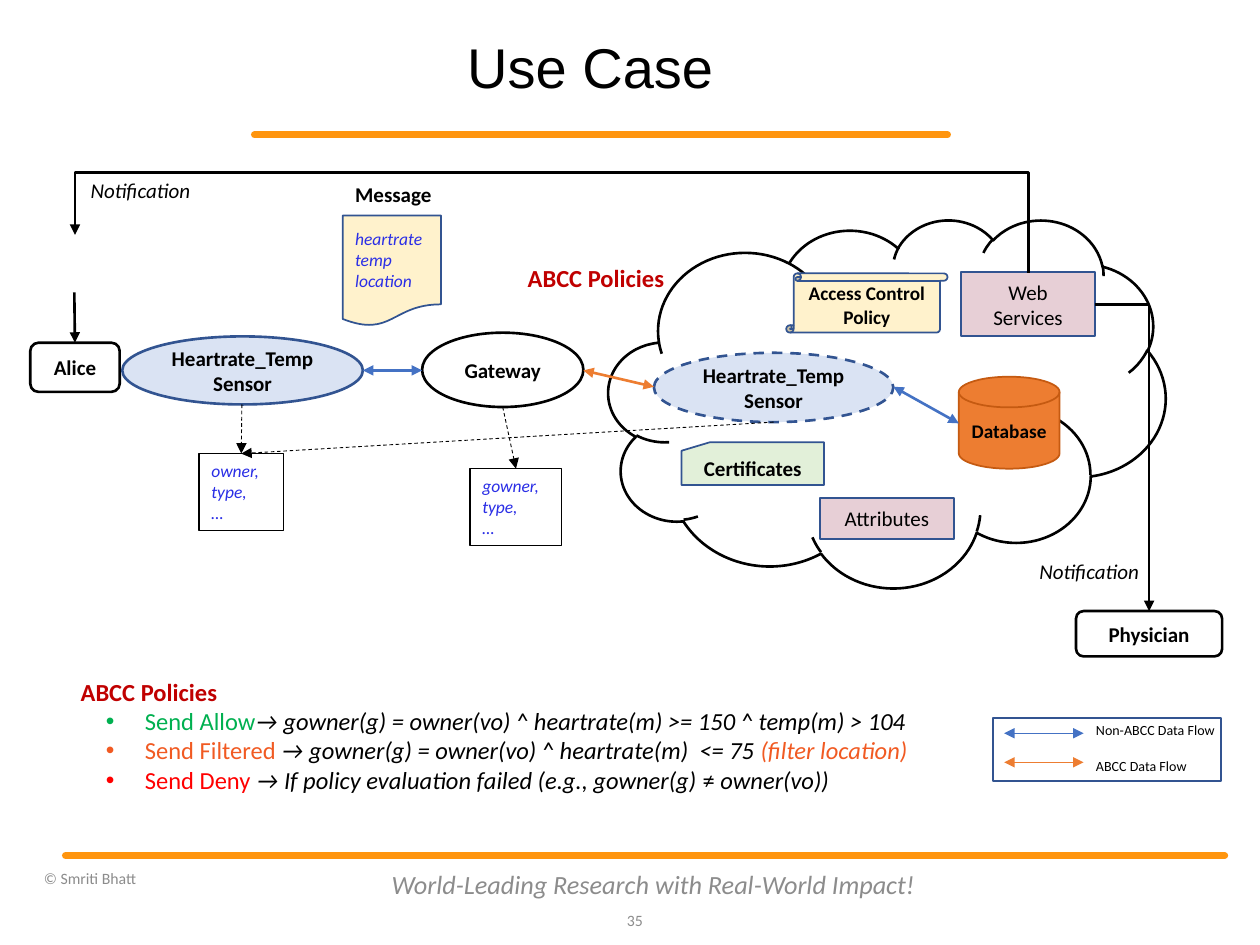
from lxml.etree import SubElement
from pptx import Presentation
from pptx.dml.color import RGBColor as RGB
from pptx.enum.dml import MSO_LINE
from pptx.enum.shapes import MSO_CONNECTOR as CON, MSO_SHAPE as SHAPE
from pptx.enum.text import MSO_ANCHOR as ANCHOR, MSO_AUTO_SIZE as FIT, PP_ALIGN as ALIGN
from pptx.oxml.ns import qn
from pptx.util import Inches, Pt

BLACK = RGB(0, 0, 0)
GRAY = RGB(0x8C, 0x8C, 0x8C)
GOLD = RGB(0xFF, 0x95, 0x0E)
NAVY = RGB(0x32, 0x54, 0x91)
BLUE = RGB(0x44, 0x72, 0xC4)
ORANGE = RGB(0xED, 0x7D, 0x31)
RUST = RGB(0xC5, 0x5A, 0x11)
SKY = RGB(0xDA, 0xE3, 0xF3)
CREAM = RGB(0xFF, 0xF2, 0xCC)
MINT = RGB(0xE2, 0xF0, 0xD9)
PINK = RGB(0xE7, 0xCF, 0xD6)
INK = RGB(0x2A, 0x2E, 0xE6)
RED = RGB(0xC0, 0, 0)
ALLOW = RGB(0, 0xB0, 0x50)
FILTER = RGB(0xF1, 0x5A, 0x22)
DENY = RGB(0xFF, 0, 0)

# key: kind, place, fill, line colour, line width, text, size, bold
NODES = {
    "sensor": (SHAPE.OVAL, (0.97, 2.67, 1.91, 0.54), SKY, NAVY, 1.5, "Heartrate_Temp Sensor", 12, True),
    "gateway": (SHAPE.OVAL, (3.35, 2.64, 1.28, 0.59), None, BLACK, 1.5, "Gateway", 12, True),
    "shadow": (SHAPE.OVAL, (5.19, 2.8, 1.9, 0.55), SKY, NAVY, 1.5, "Heartrate_Temp Sensor", 12, True),
    "cloud": (SHAPE.CLOUD, (4.83, 1.74, 4.42, 2.92), None, BLACK, 1.5, "", 12, False),
    "policy": (SHAPE.VERTICAL_SCROLL, (6.24, 2.17, 1.28, 0.47), CREAM, NAVY, 1,
               "Access Control Policy", 11, True),
    "database": (SHAPE.FLOWCHART_MAGNETIC_DISK, (7.61, 2.99, 0.8, 0.73), ORANGE, RUST, 1, "Database", 11, True),
    "certs": (SHAPE.FLOWCHART_CARD, (5.41, 3.51, 1.13, 0.34), MINT, NAVY, 1, "Certificates", 12, True),
    "alice": (SHAPE.ROUNDED_RECTANGLE, (0.24, 2.72, 0.71, 0.39), None, BLACK, 1.5, "Alice", 12, True),
    "doctor": (SHAPE.ROUNDED_RECTANGLE, (8.54, 4.85, 1.16, 0.36), None, BLACK, 1.5, "Physician", 12, True),
    "attrs": (SHAPE.RECTANGLE, (6.51, 3.95, 1.06, 0.33), PINK, NAVY, 1, "Attributes", 12, False),
    "services": (SHAPE.RECTANGLE, (7.63, 2.16, 1.06, 0.51), PINK, NAVY, 1, "Web Services", 12, False),
    "legend": (SHAPE.RECTANGLE, (7.88, 5.7, 1.81, 0.5), None, NAVY, 1, "", 12, False),
}
# key: kind, place, fill, line colour, line width, lines, alignment, anchor
NOTES = {
    "owner": (SHAPE.RECTANGLE, (1.58, 3.6, 0.67, 0.61), None, BLACK, 0.75,
              "owner,\ntype,\n…", ALIGN.JUSTIFY, ANCHOR.TOP),
    "gowner": (SHAPE.RECTANGLE, (3.73, 3.72, 0.73, 0.61), None, BLACK, 0.75,
               "gowner,\ntype,\n…", ALIGN.JUSTIFY, ANCHOR.TOP),
    "message": (SHAPE.FLOWCHART_DOCUMENT, (2.72, 1.71, 0.78, 0.88), CREAM, NAVY, 1,
                "heartrate\ntemp\nlocation", ALIGN.LEFT, ANCHOR.MIDDLE),
}
# text, place, size, colour, bold, italic
LABELS = [
    ("Notification", (0.62, 1.36, 1.22, 0.3), 12, BLACK, False, True),
    ("Notification", (8.15, 4.38, 1.22, 0.3), 12, BLACK, False, True),
    ("Message", (2.72, 1.39, 1.22, 0.3), 12, BLACK, True, False),
    ("ABCC Policies", (4.09, 2.04, 1.77, 0.33), 14, RED, True, False),
    ("Non-ABCC Data Flow", (8.6, 5.68, 1.63, 0.24), 8, BLACK, False, False),
    ("ABCC Data Flow", (8.6, 5.96, 1.63, 0.24), 8, BLACK, False, False),
]
# text, place, size, italic, alignment
FOOTER = [
    ("35", (4.8, 7.1, 0.4, 0.4), 9, False, ALIGN.RIGHT),
    ("World-Leading Research with Real-World Impact!", (3, 6.82, 4.37, 0.4), 15, True, ALIGN.CENTER),
    ("© Smriti Bhatt", (0.25, 6.79, 2.75, 0.36), 9, False, ALIGN.LEFT),
]
RULES = [(2.02, 1.07, 7.52, 1.07), (0.52, 6.79, 9.72, 6.79)]
# ends, colour, width
FLOWS = [
    ((2.88, 2.94, 3.35, 2.94), BLUE, 1.5),
    ((4.63, 2.94, 5.19, 3.07), ORANGE, 1.5),
    ((7.09, 3.07, 7.61, 3.36), BLUE, 1.5),
    ((7.97, 5.82, 8.6, 5.82), BLUE, 0.5),
    ((7.97, 6.05, 8.6, 6.05), ORANGE, 0.5),
]
# ends, node whose top is met
DASHES = [
    ((1.92, 3.21, 1.91, 3.6), "owner"),
    ((6.14, 3.35, 1.91, 3.6), "owner"),
    ((3.99, 3.23, 4.09, 3.72), "gowner"),
]
# each policy: runs of text, colour, italic
POLICIES = [
    [("Send Allow", ALLOW, False),
     ("→ gowner(g) = owner(vo) ^ heartrate(m) >= 150 ^ temp(m) > 104", BLACK, True)],
    [("Send Filtered ", FILTER, False),
     ("→ gowner(g) = owner(vo) ^ heartrate(m)  <= 75 ", BLACK, True),
     ("(filter location)", FILTER, True)],
    [("Send Deny ", DENY, False),
     ("→ If policy evaluation failed (e.g., gowner(g) ", BLACK, True),
     ("≠ ", BLACK, False), ("owner(vo))", BLACK, True)],
]


def style(font, size, color=BLACK, bold=False, italic=False, name="Calibri"):
    font.name, font.size, font.bold, font.italic = name, Pt(size), bold, italic
    font.color.rgb = color


def write(shape, text, align, anchor, *look):
    frame = shape.text_frame
    frame.word_wrap, frame.vertical_anchor = True, anchor
    frame.text = text
    for para in frame.paragraphs:
        para.alignment = align
        style(para.font, *look)


def node(kind, place, fill, color, width):
    shape = slide.shapes.add_shape(kind, *map(Inches, place))
    shape.shadow.inherit = False
    if fill:
        shape.fill.solid()
        shape.fill.fore_color.rgb = fill
    else:
        shape.fill.background()
    shape.line.color.rgb, shape.line.width = color, Pt(width)
    return shape


def link(ends, color, width, tips=(), kind=CON.STRAIGHT):
    """Add a connector; tips lists the arrow ends, headEnd before tailEnd."""
    wire = slide.shapes.add_connector(kind, *map(Inches, ends))
    wire.line.color.rgb, wire.line.width = color, Pt(width)
    for tip in tips:
        SubElement(wire.line._get_or_add_ln(), qn("a:" + tip), type="triangle")
    SubElement(wire._element.spPr, qn("a:effectLst"))
    return wire


def place_box(shape, place):
    shape.left, shape.top, shape.width, shape.height = map(Inches, place)


def indent(para, left, hang=0, bullet=None):
    props = para._p.get_or_add_pPr()
    props.set("marL", str(Inches(left)))
    props.set("indent", str(Inches(hang)))
    if bullet:
        SubElement(props, qn("a:buChar"), char=bullet)
    else:
        SubElement(props, qn("a:buNone"))
    para.space_before = Pt(0)


deck = Presentation()
deck.slide_width, deck.slide_height = Inches(10), Inches(7.5)
slide = deck.slides.add_slide(deck.slide_layouts[1])

for ends in RULES:
    link(ends, GOLD, 4).line._get_or_add_ln().set("cap", "rnd")

title, body = slide.placeholders
place_box(title, (1.99, 0.34, 5.39, 0.51))
write(title, "Use Case", ALIGN.CENTER, ANCHOR.BOTTOM, 32, BLACK, False, False, "Arial")
title.text_frame.paragraphs[0].line_spacing = 0.9
title.text_frame.auto_size = FIT.NONE

place_box(body, (0.24, 5.32, 7.47, 1.28))
write(body, "ABCC Policies", ALIGN.LEFT, ANCHOR.TOP, 14, RED, True)
body.text_frame.auto_size = FIT.NONE
indent(body.text_frame.paragraphs[0], 0.3)
for policy in POLICIES:
    para = body.text_frame.add_paragraph()
    indent(para, 0.81, -0.31, "•")
    for text, color, italic in policy:
        run = para.add_run()
        run.text = text
        style(run.font, 14, color, False, italic)

for text, place, size, italic, align in FOOTER:
    box = slide.shapes.add_textbox(*map(Inches, place))
    write(box, text, align, ANCHOR.MIDDLE, size, GRAY, False, italic)

parts = {}
for key, (*look, text, size, bold) in NODES.items():
    parts[key] = node(*look)
    if text:
        write(parts[key], text, ALIGN.CENTER, ANCHOR.MIDDLE, size, BLACK, bold)
parts["shadow"].line.dash_style = MSO_LINE.DASH
for key, (*look, text, align, anchor) in NOTES.items():
    parts[key] = node(*look)
    write(parts[key], text, align, anchor, 10, INK, False, True)

for text, place, *look in LABELS:
    box = slide.shapes.add_textbox(*map(Inches, place))
    write(box, text, ALIGN.LEFT, ANCHOR.TOP, *look)

for flow in FLOWS:
    link(*flow, ("headEnd", "tailEnd"))
for ends, goal in DASHES:
    wire = link(ends, BLACK, 0.5)
    wire.line.dash_style = MSO_LINE.DASH
    SubElement(wire.line._get_or_add_ln(), qn("a:tailEnd"), type="triangle")
    wire.end_connect(parts[goal], 0)

drop = link((0.59, 2.32, 0.59, 2.72), BLACK, 1.5, ["tailEnd"])
drop.end_connect(parts["alice"], 0)

alert = link((8.69, 2.42, 9.11, 4.85), BLACK, 1.5, ["tailEnd"], CON.ELBOW)
alert._element.spPr.find(qn("a:prstGeom")).set("prst", "bentConnector2")
alert.begin_connect(parts["services"], 3)
alert.end_connect(parts["doctor"], 0)

# A quarter turn makes this elbow leave upwards and come back down
notice = link((4.23, 5.8, 4.53, -1.77), BLACK, 1.5, ["tailEnd"], CON.ELBOW)
notice._element.spPr.find(qn("a:xfrm")).set("rot", str(270 * 60000))
bends = notice._element.spPr.find(qn("a:prstGeom")).find(qn("a:avLst"))
SubElement(bends, qn("a:gd"), name="adj1", fmla="val 264600")

deck.save("out.pptx")
